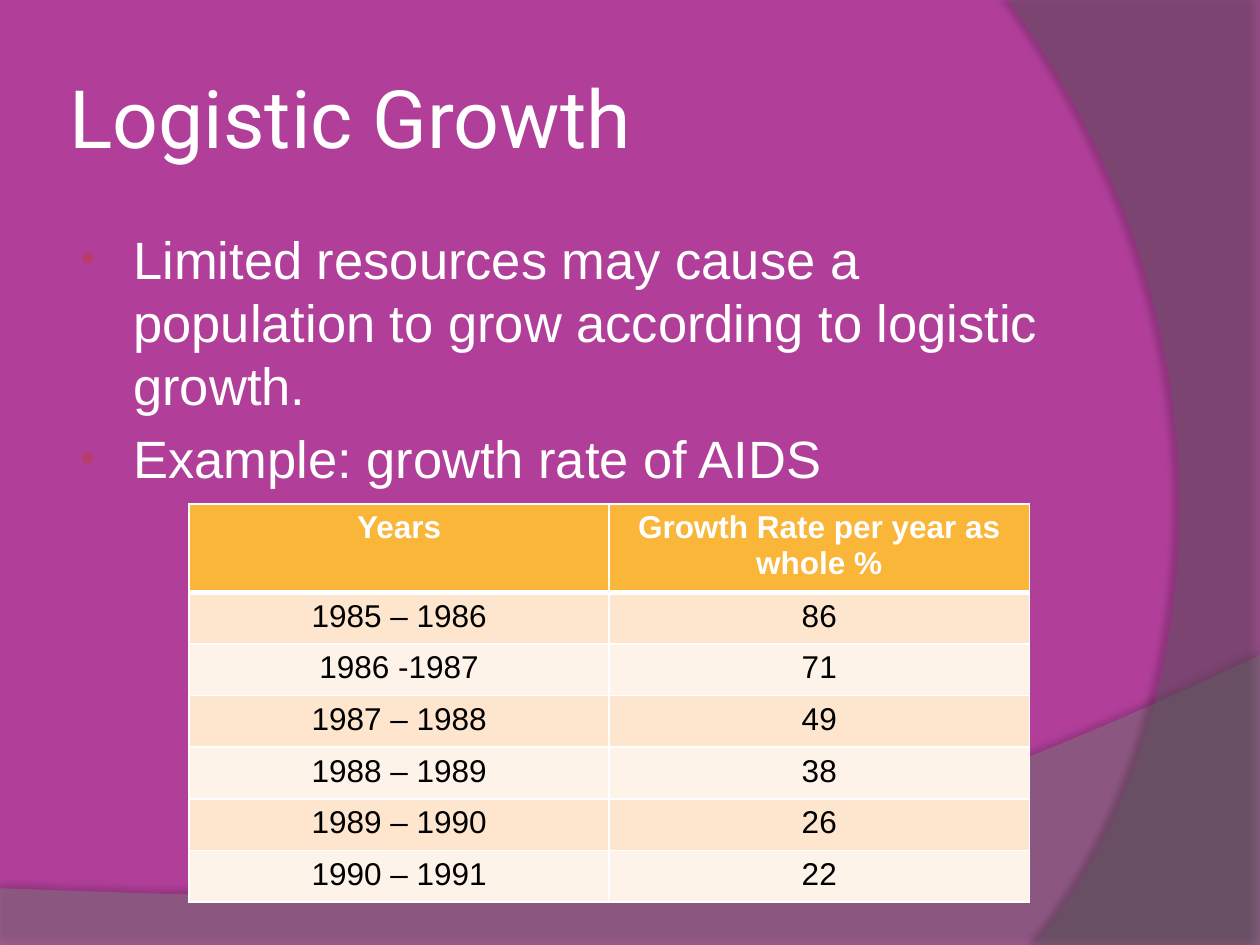
from dataclasses import dataclass

from lxml.etree import SubElement
from pptx import Presentation
from pptx.dml.color import RGBColor
from pptx.enum.text import MSO_ANCHOR, MSO_AUTO_SIZE, PP_ALIGN
from pptx.oxml.ns import qn
from pptx.util import Inches, Pt

Point = tuple[float, float]
WHITE = "FFFFFF"
BLACK = "000000"
BAND_FILLS = ("FDE5CE", "FEF3E8")
CURVE_STEPS = 60


@dataclass(frozen=True)
class Shadow:
    opacity: int
    distance: float
    direction: int
    blur: float = 4


@dataclass(frozen=True)
class Swoosh:
    curve: tuple[Point, Point, Point, Point]
    corners: tuple[Point, ...]
    color: str
    opacity: int
    shadow: Shadow


@dataclass(frozen=True)
class GrowthRow:
    years: str
    rate: str


SWOOSHES = (
    Swoosh(((10, 5.2), (5.59, 7.29), (3.91, 7.19), (0, 7.05)),
           ((0, 7.5), (10, 7.5)), "7F7F7F", 45, Shadow(35, 3.5, 270)),
    Swoosh(((8.21, 7.5), (9.35, 6.19), (10.18, 3), (8, 0)),
           ((10, 0), (10, 7.5)), "5E5E5E", 40, Shadow(45, 4, 180)),
)
BULLETS = (
    "Limited resources may cause a population to grow according to logistic growth.",
    "Example: growth rate of AIDS",
)
GROWTH_ROWS = (
    GrowthRow("Years", "Growth Rate per year as whole %"),
    GrowthRow("1985 – 1986", "86"),
    GrowthRow("1986 -1987", "71"),
    GrowthRow("1987 – 1988", "49"),
    GrowthRow("1988 – 1989", "38"),
    GrowthRow("1989 – 1990", "26"),
    GrowthRow("1990 – 1991", "22"),
)


def rgb(color: str) -> RGBColor:
    return RGBColor.from_string(color)


def add_color(parent, color: str, opacity: int = 100) -> None:
    node = SubElement(parent, qn("a:srgbClr"), val=color)
    if opacity < 100:
        SubElement(node, qn("a:alpha"), val=str(opacity * 1000))


def style_font(paragraph, size: float, name: str, color: str, bold: bool = False) -> None:
    font = paragraph.font
    font.size, font.name, font.bold = Pt(size), name, bold
    font.color.rgb = rgb(color)


def curve_point(curve: tuple[Point, ...], t: float) -> Point:
    weights = ((1 - t) ** 3, 3 * t * (1 - t) ** 2, 3 * t ** 2 * (1 - t), t ** 3)
    x, y = (sum(w * p[axis] for w, p in zip(weights, curve)) for axis in (0, 1))
    return x, y


def draw_swoosh(slide, swoosh: Swoosh) -> None:
    edge = [curve_point(swoosh.curve, step / CURVE_STEPS) for step in range(CURVE_STEPS + 1)]
    start, *rest = [(Inches(x), Inches(y)) for x, y in (*edge, *swoosh.corners)]
    builder = slide.shapes.build_freeform(*start)
    builder.add_line_segments(rest, close=True)
    shape = builder.convert_to_shape()
    shape.fill.solid()
    shape.fill.fore_color.rgb = rgb(swoosh.color)
    shape.line.fill.background()
    properties = shape.element.spPr
    fill_color = properties.find(qn("a:solidFill")).find(qn("a:srgbClr"))
    SubElement(fill_color, qn("a:alpha"), val=str(swoosh.opacity * 1000))
    shadow = swoosh.shadow
    effects = SubElement(properties, qn("a:effectLst"))
    outer = SubElement(effects, qn("a:outerShdw"), blurRad=str(Pt(shadow.blur)),
                       dist=str(Pt(shadow.distance)), dir=str(shadow.direction * 60000),
                       algn="ctr", rotWithShape="0")
    add_color(outer, BLACK, shadow.opacity)


def write_title(slide, text: str) -> None:
    title = slide.shapes.title
    title.left, title.top = Inches(0.5), Inches(0.3)
    title.width, title.height = Inches(8.17), Inches(1.25)
    frame = title.text_frame
    frame.text = text
    frame.word_wrap = True
    frame.auto_size = MSO_AUTO_SIZE.NONE
    frame.vertical_anchor = MSO_ANCHOR.MIDDLE
    frame.margin_left = frame.margin_right = Inches(0.05)
    frame.margin_top = frame.margin_bottom = Inches(0.05)
    paragraph = frame.paragraphs[0]
    paragraph.alignment = PP_ALIGN.LEFT
    style_font(paragraph, 46, "Roboto", WHITE)


def add_bullet(paragraph) -> None:
    properties = paragraph._p.get_or_add_pPr()
    properties.set("marL", str(Inches(0.46)))
    properties.set("indent", str(Inches(-0.42)))
    add_color(SubElement(properties, qn("a:buClr")), "B83D68")
    SubElement(properties, qn("a:buSzPct"), val="80000")
    SubElement(properties, qn("a:buFont"), typeface="Arial")
    SubElement(properties, qn("a:buChar"), char="•")


def write_bullets(slide, texts: tuple[str, ...]) -> None:
    body = slide.shapes.add_textbox(Inches(0.5), Inches(1.75), Inches(8.17), Inches(4.95))
    frame = body.text_frame
    frame.word_wrap = True
    for index, text in enumerate(texts):
        paragraph = frame.add_paragraph() if index else frame.paragraphs[0]
        paragraph.text = text
        add_bullet(paragraph)
        paragraph.space_before = Pt(6)
        style_font(paragraph, 30, "Arial", WHITE)


def add_borders(cell, top: float, bottom: float) -> None:
    properties = cell._tc.get_or_add_tcPr()
    for side, width in (("L", 1), ("R", 1), ("T", top), ("B", bottom)):
        line = SubElement(properties, qn(f"a:ln{side}"), w=str(Pt(width)))
        add_color(SubElement(line, qn("a:solidFill")), WHITE)


def draw_table(slide, rows: tuple[GrowthRow, ...]) -> None:
    row_height = 0.41
    table = slide.shapes.add_table(len(rows), 2, Inches(1.5), Inches(4),
                                   Inches(6.67), Inches(row_height * len(rows))).table
    for index, row in enumerate(rows):
        header = index == 0
        table.rows[index].height = Inches(row_height)
        for column, text in enumerate((row.years, row.rate)):
            cell = table.cell(index, column)
            cell.text = text
            add_borders(cell, top=3 if index == 1 else 1, bottom=3 if header else 1)
            cell.fill.solid()
            cell.fill.fore_color.rgb = rgb("F9B639" if header else BAND_FILLS[(index - 1) % 2])
            paragraph = cell.text_frame.paragraphs[0]
            paragraph.alignment = PP_ALIGN.CENTER
            style_font(paragraph, 18, "Arial", WHITE if header else BLACK, header)


def main() -> None:
    deck = Presentation()
    deck.slide_width, deck.slide_height = Inches(10), Inches(7.5)
    slide = deck.slides.add_slide(deck.slide_layouts[5])
    slide.background.fill.solid()
    slide.background.fill.fore_color.rgb = rgb("B13F9A")
    for swoosh in SWOOSHES:
        draw_swoosh(slide, swoosh)
    write_title(slide, "Logistic Growth")
    write_bullets(slide, BULLETS)
    draw_table(slide, GROWTH_ROWS)
    deck.save("out.pptx")


if __name__ == "__main__":
    main()
